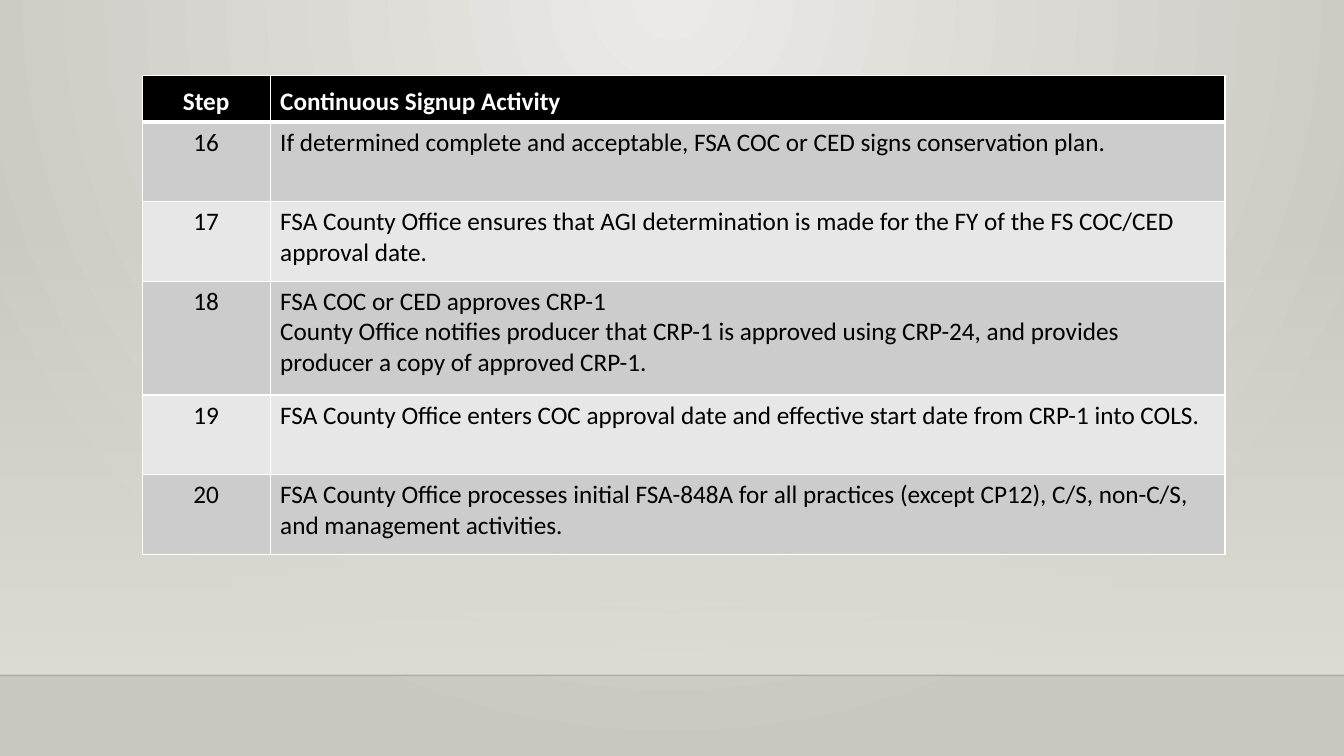
from dataclasses import dataclass

from lxml import etree
from pptx import Presentation
from pptx import util as u
from pptx.dml.color import RGBColor
from pptx.enum import shapes, text
from pptx.oxml import parse_xml
from pptx.oxml.ns import nsdecls, qn


@dataclass(frozen=True)
class Theme:
    font: str = "Calibri"
    size: int = 18
    glow: str = "ECEAE7"
    edge: str = "CAC7C1"
    wall: str = "DFDBD5"
    horizon: str = "000001"
    header: str = "000000"
    header_text: str = "FFFFFF"
    body_text: str = "000000"
    bands: tuple = ("CCCCCC", "E7E7E7")
    border: str = "FFFFFF"
    thin: int = 1
    thick: int = 3


THEME = Theme()
SLIDE_WIDTH, SLIDE_HEIGHT = 13.33, 7.5
WALL_TOP, HORIZON = 2.21, 6.7
COLUMN_WIDTHS = (1.27, 9.47)
ROW_HEIGHTS = (0.46, 0.79, 0.79, 1.13, 0.79, 0.79)
FIRST_STEP = 16
HEADINGS = ("Step", "Continuous Signup Activity")
ACTIVITIES = (
    ("If determined complete and acceptable, FSA COC or CED signs conservation plan.",),
    ("FSA County Office ensures that AGI determination is made for the FY of the "
     "FS COC/CED approval date.",),
    ("FSA COC or CED approves CRP-1",
     "County Office notifies producer that CRP-1 is approved using CRP-24, and "
     "provides producer a copy of approved CRP-1."),
    ("FSA County Office enters COC approval date and effective start date from "
     "CRP-1 into COLS.",),
    ("FSA County Office processes initial FSA-848A for all practices (except CP12), "
     "C/S, non-C/S, and management activities.",),
)


def gradient_xml(start, end, direction, start_alpha=100):
    return (
        f'<a:gradFill {nsdecls("a")} rotWithShape="1"><a:gsLst>'
        f'<a:gs pos="0"><a:srgbClr val="{start}"><a:alpha val="{start_alpha * 1000}"/>'
        f'</a:srgbClr></a:gs>'
        f'<a:gs pos="100000"><a:srgbClr val="{end}"/></a:gs>'
        f'</a:gsLst>{direction}</a:gradFill>'
    )


def set_background(slide):
    direction = ('<a:path path="circle">'
                 '<a:fillToRect l="43000" t="0" r="43000" b="100000"/></a:path>')
    background = parse_xml(
        f'<p:bg {nsdecls("p", "a")}><p:bgPr>'
        f'{gradient_xml(THEME.glow, THEME.edge, direction)}'
        '<a:effectLst/></p:bgPr></p:bg>'
    )
    slide.element.cSld.insert(0, background)


def add_wall(slide):
    wall = slide.shapes.add_shape(
        shapes.MSO_SHAPE.RECTANGLE, 0, u.Inches(WALL_TOP),
        u.Inches(SLIDE_WIDTH), u.Inches(HORIZON - WALL_TOP))
    wall.shadow.inherit = False
    wall.line.fill.background()
    wall.fill.background()
    properties = wall.element.spPr
    fade = gradient_xml(THEME.wall, THEME.wall, '<a:lin ang="5400000" scaled="0"/>', 0)
    properties.replace(properties.find(qn("a:noFill")), parse_xml(fade))


def add_horizon(slide):
    horizon = slide.shapes.add_connector(
        shapes.MSO_CONNECTOR.STRAIGHT, 0, u.Inches(HORIZON),
        u.Inches(SLIDE_WIDTH), u.Inches(HORIZON))
    horizon.line.width = u.Pt(1)
    horizon.line.color.rgb = RGBColor.from_string(THEME.horizon)
    properties = horizon.element.spPr
    color = next(properties.iter(qn("a:srgbClr")))
    etree.SubElement(color, qn("a:alpha")).set("val", "20000")
    etree.SubElement(properties, qn("a:effectLst"))


def set_borders(cell, top, bottom):
    properties = cell._tc.get_or_add_tcPr()
    widths = {"L": THEME.thin, "R": THEME.thin, "T": top, "B": bottom}
    for side, width in widths.items():
        properties.append(parse_xml(
            f'<a:ln{side} {nsdecls("a")} w="{u.Pt(width)}"><a:solidFill>'
            f'<a:srgbClr val="{THEME.border}"/></a:solidFill></a:ln{side}>'))


def fill_cell(cell, lines, fill, color, bold, centered):
    cell.fill.solid()
    cell.fill.fore_color.rgb = RGBColor.from_string(fill)
    frame = cell.text_frame
    for index, line in enumerate(lines):
        paragraph = frame.add_paragraph() if index else frame.paragraphs[0]
        paragraph.alignment = text.PP_ALIGN.CENTER if centered else text.PP_ALIGN.LEFT
        run = paragraph.add_run()
        run.text = line
        run.font.name = THEME.font
        run.font.size = u.Pt(THEME.size)
        run.font.bold = bold
        run.font.color.rgb = RGBColor.from_string(color)


def add_steps_table(slide):
    rows = [[(heading,) for heading in HEADINGS]]
    rows += [[(str(step),), lines] for step, lines in enumerate(ACTIVITIES, FIRST_STEP)]
    steps = slide.shapes.add_table(
        len(rows), len(HEADINGS), u.Inches(1.41), u.Inches(0.75),
        u.Inches(sum(COLUMN_WIDTHS)), u.Inches(sum(ROW_HEIGHTS))).table
    for column, width in zip(steps.columns, COLUMN_WIDTHS):
        column.width = u.Inches(width)
    for row, height in zip(steps.rows, ROW_HEIGHTS):
        row.height = u.Inches(height)

    for r, row in enumerate(rows):
        is_header = r == 0
        fill = THEME.header if is_header else THEME.bands[(r - 1) % 2]
        color = THEME.header_text if is_header else THEME.body_text
        for c, lines in enumerate(row):
            cell = steps.cell(r, c)
            set_borders(cell, THEME.thick if r == 1 else THEME.thin,
                        THEME.thick if is_header else THEME.thin)
            fill_cell(cell, lines, fill, color, is_header, c == 0)
            cell.vertical_anchor = (text.MSO_ANCHOR.BOTTOM if is_header
                                    else text.MSO_ANCHOR.TOP)


def main():
    deck = Presentation()
    deck.slide_width = u.Inches(SLIDE_WIDTH)
    deck.slide_height = u.Inches(SLIDE_HEIGHT)
    slide = deck.slides.add_slide(deck.slide_layouts[6])

    # Backdrop
    set_background(slide)
    add_wall(slide)
    add_horizon(slide)

    # Signup steps
    add_steps_table(slide)

    deck.save("out.pptx")


if __name__ == "__main__":
    main()
